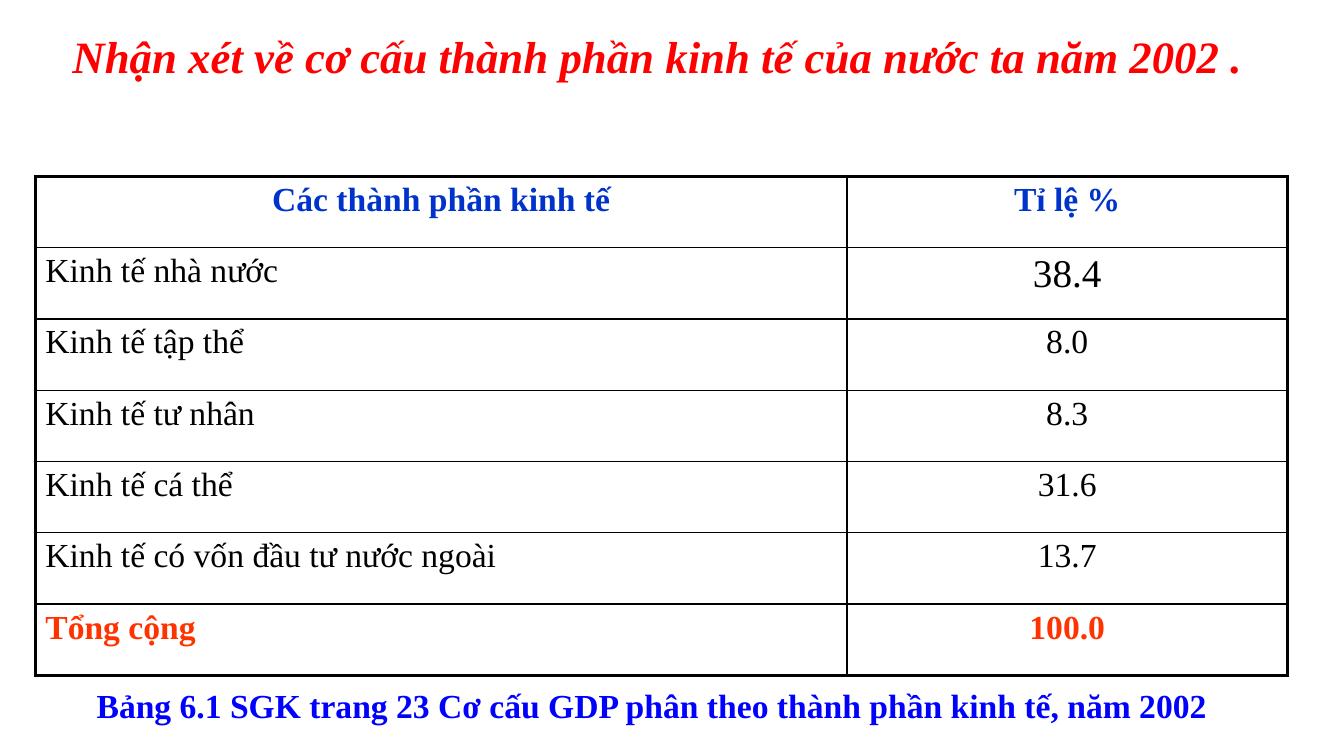
"""Build a slide with a table of GDP shares by economic sector in 2002."""
from lxml import etree
from pptx import Presentation
from pptx.dml.color import RGBColor
from pptx.enum.text import PP_ALIGN
from pptx.oxml.ns import qn
from pptx.util import Inches, Pt

LEFT, CENTER = PP_ALIGN.LEFT, PP_ALIGN.CENTER
BLACK = RGBColor(0x00, 0x00, 0x00)
WHITE = RGBColor(0xFF, 0xFF, 0xFF)
RED = RGBColor(0xFF, 0x00, 0x00)
BLUE = RGBColor(0x00, 0x00, 0xFF)
HEADER_BLUE = RGBColor(0x00, 0x33, 0xCC)
TOTAL_ORANGE = RGBColor(0xFF, 0x33, 0x00)
FONT = "Times New Roman"
BODY_SIZE, FIRST_SHARE_SIZE, TITLE_SIZE = 24, 28, 32
THIN, THICK = 1, 2.25

TITLE = "Nhận xét về cơ cấu thành phần kinh tế của nước ta năm 2002 ."
CAPTION = "Bảng 6.1 SGK trang 23 Cơ cấu GDP phân theo thành phần kinh tế, năm 2002"
ROWS = [
    ("Các thành phần kinh tế", "Tỉ lệ %"),
    ("Kinh tế nhà nước", "38.4"),
    ("Kinh tế tập thể", "8.0"),
    ("Kinh tế tư nhân", "8.3"),
    ("Kinh tế cá thể", "31.6"),
    ("Kinh tế có vốn đầu tư nước ngoài", "13.7"),
    ("Tổng cộng", "100.0"),
]
COLUMN_WIDTHS = (8.05, 4.37)
TABLE_LEFT, TABLE_TOP, TABLE_HEIGHT = 0.35, 1.75, 4.95
LAST_ROW, LAST_COLUMN = len(ROWS) - 1, len(COLUMN_WIDTHS) - 1


def add_run(paragraph, text, size, color, bold=False, italic=False):
    run = paragraph.add_run()
    run.text = text
    font = run.font
    font.name, font.size = FONT, Pt(size)
    font.bold, font.italic = bold, italic
    font.color.rgb = color


def add_text(slide, box, text, size, color, italic=False):
    shape = slide.shapes.add_textbox(*map(Inches, box))
    shape.text_frame.word_wrap = True
    add_run(shape.text_frame.paragraphs[0], text, size, color, True, italic)


def set_borders(cell, outer_edges):
    properties = cell._tc.get_or_add_tcPr()
    for position, (tag, outer) in enumerate(outer_edges.items()):
        line = etree.Element(qn(f"a:{tag}"), w=str(Pt(THICK if outer else THIN)))
        fill = etree.SubElement(line, qn("a:solidFill"))
        etree.SubElement(fill, qn("a:srgbClr"), val=str(BLACK))
        properties.insert(position, line)


def fill_cell(cell, text, row, column):
    color = {0: HEADER_BLUE, LAST_ROW: TOTAL_ORANGE}.get(row, BLACK)
    size = FIRST_SHARE_SIZE if (row, column) == (1, 1) else BODY_SIZE
    paragraph = cell.text_frame.paragraphs[0]
    paragraph.alignment = CENTER if row == 0 or column == 1 else LEFT
    add_run(paragraph, text, size, color, bold=row in (0, LAST_ROW))
    cell.fill.solid()
    cell.fill.fore_color.rgb = WHITE
    set_borders(cell, {"lnL": column == 0, "lnR": column == LAST_COLUMN,
                       "lnT": row == 0, "lnB": row == LAST_ROW})


def add_share_table(slide):
    box = (TABLE_LEFT, TABLE_TOP, sum(COLUMN_WIDTHS), TABLE_HEIGHT)
    table = slide.shapes.add_table(len(ROWS), len(COLUMN_WIDTHS), *map(Inches, box)).table
    table.first_row = table.horz_banding = False
    for column, width in zip(table.columns, COLUMN_WIDTHS):
        column.width = Inches(width)
    for row, texts in enumerate(ROWS):
        for column, text in enumerate(texts):
            fill_cell(table.cell(row, column), text, row, column)


def main():
    presentation = Presentation()
    presentation.slide_width, presentation.slide_height = Inches(13.33), Inches(7.5)
    slide = presentation.slides.add_slide(presentation.slide_layouts[6])
    add_share_table(slide)
    add_text(slide, (0.86, 6.75, 11.72, 0.5), CAPTION, BODY_SIZE, BLUE)
    add_text(slide, (0.62, 0.24, 12.42, 0.64), TITLE, TITLE_SIZE, RED, italic=True)
    presentation.save("out.pptx")


if __name__ == "__main__":
    main()
